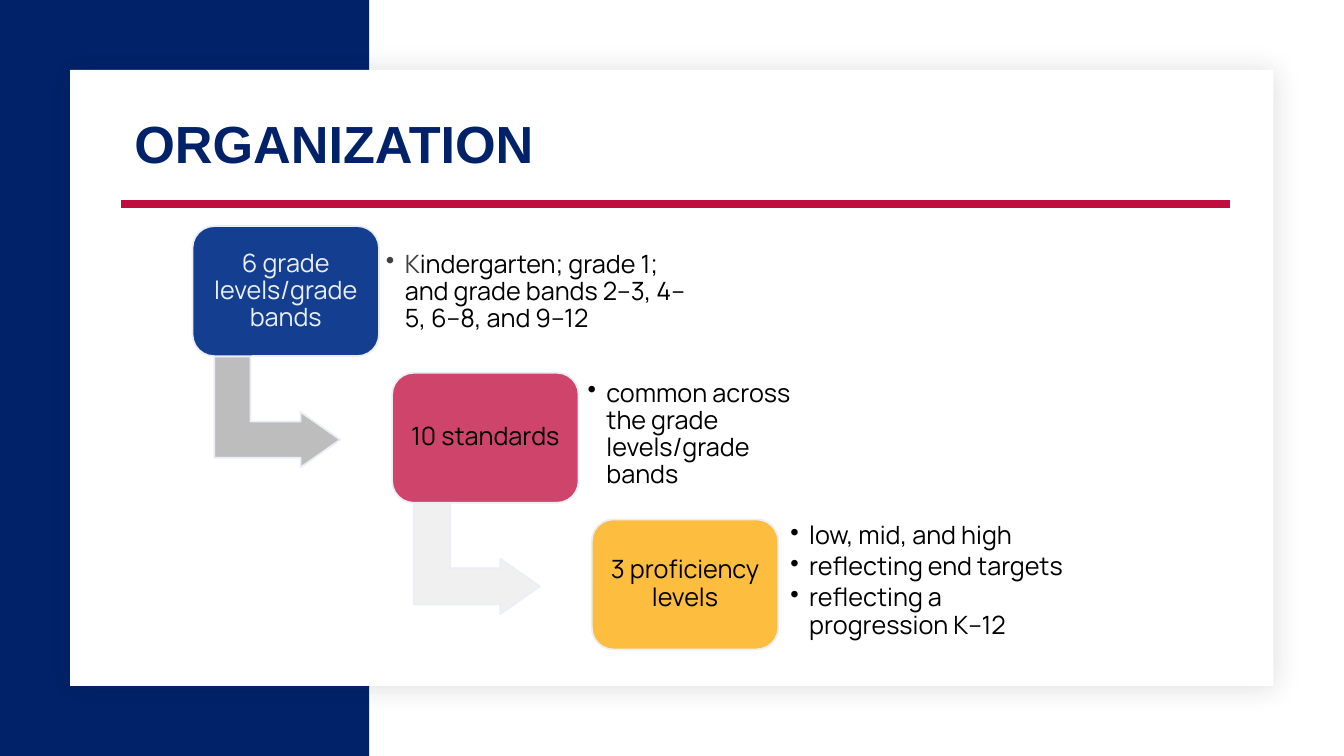
import pptx
import pptx.util
import pptx.dml.color
import pptx.enum.shapes
import pptx.enum.text
import pptx.oxml

Pt = pptx.util.Pt
KIND = pptx.enum.shapes.MSO_SHAPE
ALIGN = pptx.enum.text.PP_ALIGN
ANCHOR = pptx.enum.text.MSO_ANCHOR
NS = 'xmlns:a="http://schemas.openxmlformats.org/drawingml/2006/main"'
NAVY, WHITE, RED, PALE, BLACK = "012169", "FFFFFF", "BF0D3E", "ECEEF7", "000000"
STEP = (142.6, 104.75)
SIZE = (133.2, 92.9)
STEPS = [
    {"name": "6 grade levels/grade bands", "fill": "143F90", "ink": PALE, "arrow": "BDBDBD",
     "box": (133.2, 3.6, 231.8, 87.8),
     "notes": [[("K", "404040"),
                ("indergarten; grade 1; and grade bands 2–3, 4–5, 6–8, and 9–12", BLACK)]]},
    {"name": "10 standards", "fill": "CE446A", "ink": BLACK, "arrow": "F1F0F0",
     "box": (134.6, 6.5, 162.7, 75.6),
     "notes": [[("common across the grade levels/grade bands", BLACK)]]},
    {"name": "3 proficiency levels", "fill": "FDBD3F", "ink": BLACK, "arrow": None,
     "box": (136.8, 0.7, 219.6, 87.1),
     "notes": [[("low, mid, and high", BLACK)], [("reflecting end targets", BLACK)],
               [("reflecting a progression K–12", BLACK)]]},
]


def paint(item, color):
    """Give a fill, line or font its hex colour."""
    item.rgb = pptx.dml.color.RGBColor.from_string(color)


def style(item, **values):
    """Set attributes from a dict of format values."""
    for key, value in values.items():
        setattr(item, key, value)


def shape(slide, kind, box, color, edge=None):
    """Add a filled preset shape with an optional outline."""
    part = slide.shapes.add_shape(kind, *map(Pt, box))
    part.shadow.inherit = False
    part.fill.solid()
    paint(part.fill.fore_color, color)
    if edge:
        paint(part.line.color, edge)
        part.line.width = Pt(1.25)
    else:
        part.line.fill.background()
    return part


def frame(part, side, top, anchor):
    """Set the insets, wrapping and anchor of a text frame."""
    body = part.text_frame
    style(body, word_wrap=True, vertical_anchor=anchor, margin_left=Pt(side),
          margin_right=Pt(side), margin_top=Pt(top), margin_bottom=Pt(top))
    return body


def write(para, text, color, size=18, face="Manrope", bold=False):
    """Add one run of text to a paragraph."""
    run = para.add_run()
    run.text = text
    style(run.font, size=Pt(size), name=face, bold=bold)
    paint(run.font.color, color)


def panel(slide, box):
    """Draw the navy band and the shadowed white card in the box."""
    left, top, width, height = box
    shape(slide, KIND.RECTANGLE, (left, top, 263.8, height), NAVY)
    card = shape(slide, KIND.RECTANGLE, (left + 50, top + 50, 859.6, 440), WHITE)
    props = card.fill._xPr
    props.remove(props.find(pptx.oxml.ns.qn("a:effectLst")))
    props.append(pptx.oxml.parse_xml(
        f'<a:effectLst {NS}><a:outerShdw blurRad="{Pt(20)}" dist="{Pt(2)}" dir="2700000" '
        'rotWithShape="0"><a:srgbClr val="1F2125"><a:alpha val="15000"/></a:srgbClr>'
        '</a:outerShdw></a:effectLst>'))


def head(slide, box):
    """Write the title in the box and rule a line below it."""
    left, top, width, height = box
    part = slide.shapes.add_textbox(*map(Pt, box))
    body = frame(part, 9.6, 4.8, ANCHOR.BOTTOM)
    write(body.paragraphs[0], "ORGANIZATION", NAVY, 37.3, "Arial", True)
    level = top + height + 16.7
    rule = slide.shapes.add_connector(pptx.enum.shapes.MSO_CONNECTOR.STRAIGHT,
                                      Pt(left), Pt(level), Pt(left + width), Pt(level))
    paint(rule.line.color, RED)
    rule.line.width = Pt(6)
    rule._element.spPr.append(pptx.oxml.parse_xml(f"<a:effectLst {NS}/>"))


def notes(slide, box, items):
    """List the bulleted notes of a step in the box."""
    body = frame(slide.shapes.add_textbox(*map(Pt, box)), 5, 5, ANCHOR.MIDDLE)
    for index, runs in enumerate(items):
        para = body.add_paragraph() if index else body.paragraphs[0]
        style(para, line_spacing=0.9, space_after=Pt(2.7))
        props = para._p.get_or_add_pPr()
        props.set("marL", str(Pt(13.5)))
        props.set("indent", str(-Pt(13.5)))
        props.append(pptx.oxml.parse_xml(f'<a:buChar {NS} char="•"/>'))
        for text, color in runs:
            write(para, text, color)


def step(slide, box, data):
    """Draw one step: its arrow, its box and its notes."""
    left, top, width, height = box
    if data["arrow"]:
        bend = shape(slide, KIND.BENT_UP_ARROW, (left + 20.9, top + 87.8, 79.2, 90),
                     data["arrow"], PALE)
        bend.rotation = 90
        for index, value in enumerate((0.328, 0.25, 0.358)):
            bend.adjustments[index] = value
    tile = shape(slide, KIND.ROUNDED_RECTANGLE, box, data["fill"], PALE)
    para = frame(tile, 3, 5, ANCHOR.MIDDLE).paragraphs[0]
    style(para, alignment=ALIGN.CENTER, line_spacing=0.9, space_after=Pt(6.3))
    write(para, data["name"], data["ink"])
    right, down, wide, high = data["box"]
    notes(slide, (left + right, top + down, wide, high), data["notes"])


def stairs(slide, box):
    """Set the steps along a falling diagonal from the corner of the box."""
    left, top = box
    for index, data in enumerate(STEPS):
        step(slide, (left + index * STEP[0], top + index * STEP[1], *SIZE), data)


def main():
    """Build and save the slide."""
    deck = pptx.Presentation()
    style(deck, slide_width=Pt(960), slide_height=Pt(540))
    slide = deck.slides.add_slide(deck.slide_layouts[6])
    panel(slide, (0, 0, 960, 540))
    head(slide, (86.4, 74.2, 792, 54.7))
    stairs(slide, (137.5, 161.5))
    deck.save("out.pptx")


if __name__ == "__main__":
    main()
